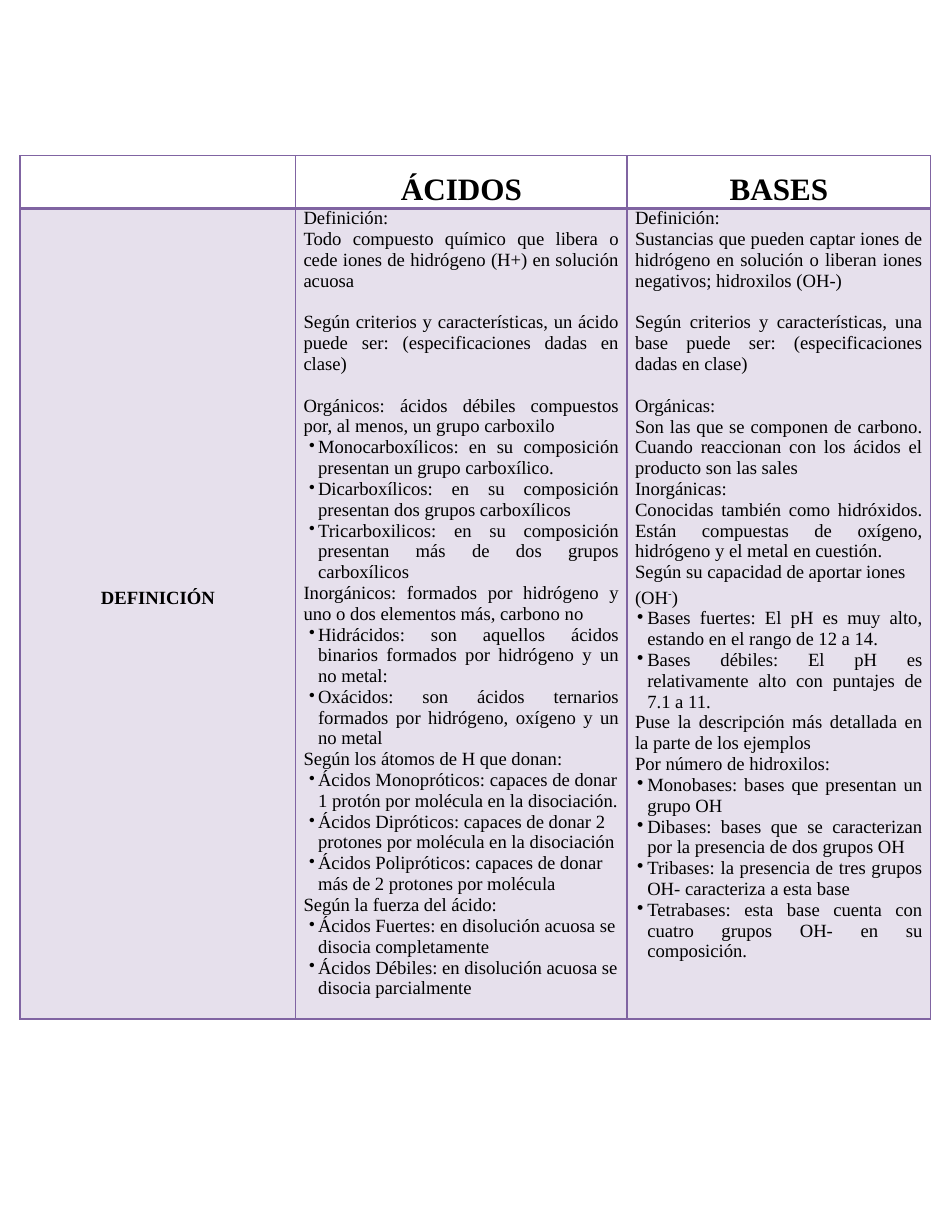
from lxml import etree
from pptx import Presentation
from pptx.dml.color import RGBColor
from pptx.enum.text import MSO_ANCHOR, PP_ALIGN
from pptx.oxml.ns import qn
from pptx.util import Inches, Pt

CENTER, LEFT, JUSTIFY = PP_ALIGN.CENTER, PP_ALIGN.LEFT, PP_ALIGN.JUSTIFY
MIDDLE = MSO_ANCHOR.MIDDLE
PURPLE = RGBColor(0x80, 0x64, 0xA2)
LILAC = RGBColor(0xE6, 0xE0, 0xEC)
BLACK = RGBColor(0, 0, 0)
FONT = "Times New Roman"
BLANK_LAYOUT = 6
LINE_GAP = 13.5

PLAIN, JUSTIFIED, SPACED, SPACED_PLAIN, BULLET, BULLET_PLAIN, FORMULA = range(7)

ACIDS = [
    (PLAIN, "Definición:"),
    (JUSTIFIED, "Todo compuesto químico que libera o cede iones de hidrógeno (H+) en solución acuosa"),
    (SPACED, "Según criterios y características, un ácido puede ser: (especificaciones dadas en clase)"),
    (SPACED, "Orgánicos: ácidos débiles compuestos por, al menos, un grupo carboxilo"),
    (BULLET, "Monocarboxílicos: en su composición presentan un grupo carboxílico."),
    (BULLET, "Dicarboxílicos: en su composición presentan dos grupos carboxílicos"),
    (BULLET, "Tricarboxilicos: en su composición presentan más de dos grupos carboxílicos"),
    (JUSTIFIED, "Inorgánicos: formados por hidrógeno y uno o dos elementos más, carbono no"),
    (BULLET, "Hidrácidos: son aquellos ácidos binarios formados por hidrógeno y un no metal:"),
    (BULLET, "Oxácidos: son ácidos ternarios formados por hidrógeno, oxígeno y un no metal"),
    (JUSTIFIED, "Según los átomos de H que donan:"),
    (BULLET_PLAIN, "Ácidos Monopróticos: capaces de donar 1 protón por molécula en la disociación."),
    (BULLET_PLAIN, "Ácidos Dipróticos: capaces de donar 2 protones por molécula en la disociación"),
    (BULLET_PLAIN, "Ácidos Polipróticos: capaces de donar más de 2 protones por molécula"),
    (PLAIN, "Según la fuerza del ácido:"),
    (BULLET_PLAIN, "Ácidos Fuertes: en disolución acuosa se disocia completamente"),
    (BULLET_PLAIN, "Ácidos Débiles: en disolución acuosa se disocia parcialmente"),
]
BASES = [
    (PLAIN, "Definición:"),
    (JUSTIFIED, "Sustancias que pueden captar iones de hidrógeno en solución o liberan iones negativos; hidroxilos (OH-)"),
    (SPACED, "Según criterios y características, una base puede ser: (especificaciones dadas en clase)"),
    (SPACED_PLAIN, "Orgánicas:"),
    (JUSTIFIED, "Son las que se componen de carbono. Cuando reaccionan con los ácidos el producto son las sales"),
    (PLAIN, "Inorgánicas:"),
    (JUSTIFIED, "Conocidas también como hidróxidos. Están compuestas de oxígeno, hidrógeno y el metal en cuestión."),
    (JUSTIFIED, "Según su capacidad de aportar iones"),
    (FORMULA, "(OH"),
    (BULLET, "Bases fuertes: El pH es muy alto, estando en el rango de 12 a 14."),
    (BULLET, "Bases débiles: El pH es relativamente alto con puntajes de 7.1 a 11."),
    (JUSTIFIED, "Puse la descripción más detallada en la parte de los ejemplos"),
    (JUSTIFIED, "Por número de hidroxilos:"),
    (BULLET, "Monobases: bases que presentan un grupo OH"),
    (BULLET, "Dibases: bases que se caracterizan por la presencia de dos grupos OH"),
    (BULLET, "Tribases: la presencia de tres grupos OH- caracteriza a esta base"),
    (BULLET, "Tetrabases: esta base cuenta con cuatro grupos OH- en su composición."),
]


def format_runs(para, size, bold):
    for span in para.runs:
        span.font.name = FONT
        span.font.size = Pt(size)
        span.font.bold = bold
        span.font.color.rgb = BLACK


def add_borders(cell, widths):
    properties = cell._tc.get_or_add_tcPr()
    for position, (side, width) in enumerate(zip(("lnL", "lnR", "lnT", "lnB"), widths)):
        line = etree.Element(qn(f"a:{side}"), w=str(Pt(width)))
        fill = etree.SubElement(line, qn("a:solidFill"))
        etree.SubElement(fill, qn("a:srgbClr"), val=str(PURPLE))
        properties.insert(position, line)


deck = Presentation()
deck.slide_width, deck.slide_height = Inches(8.5), Inches(11)
page = deck.slides.add_slide(deck.slide_layouts[BLANK_LAYOUT])

frame = page.shapes.add_table(2, 3, Inches(0.18), Inches(1.39), Inches(8.13), Inches(7.71))
table = frame.table
table.first_row = table.horz_banding = False
for column, width in zip(table.columns, (2.46, 2.96, 2.71)):
    column.width = Inches(width)
for row, height in zip(table.rows, (0.47, 7.24)):
    row.height = Inches(height)

for row_index in range(2):
    for cell in table.rows[row_index].cells:
        cell.margin_left = cell.margin_right = cell.margin_top = cell.margin_bottom = 0
        if row_index:
            cell.fill.solid()
            cell.fill.fore_color.rgb = LILAC
            add_borders(cell, (1, 1, 2, 1))
        else:
            cell.fill.background()
            add_borders(cell, (1, 1, 1, 2))

for column_index, heading in enumerate(("ÁCIDOS", "BASES"), 1):
    para = table.cell(0, column_index).text_frame.paragraphs[0]
    para.text = heading
    para.alignment = CENTER
    para.line_spacing = 1.5
    format_runs(para, 20, True)

label = table.cell(1, 0)
label.vertical_anchor = MIDDLE
label.margin_bottom = Inches(0.27)
para = label.text_frame.paragraphs[0]
para.text = "DEFINICIÓN"
para.alignment = CENTER
format_runs(para, 12, True)

for column_index, entries, hanging, bullet_size in ((1, ACIDS, (0.2, -0.08), 91), (2, BASES, (0.18, -0.09), 100)):
    body = table.cell(1, column_index).text_frame
    for entry_index, (kind, wording) in enumerate(entries):
        para = body.add_paragraph() if entry_index else body.paragraphs[0]
        para.text = wording
        para.alignment = JUSTIFY if kind in (JUSTIFIED, SPACED, BULLET) else LEFT
        para.space_before = Pt({SPACED: LINE_GAP, SPACED_PLAIN: LINE_GAP, FORMULA: 3}.get(kind, 0.1))
        if kind == FORMULA:
            charge = para.add_run()
            charge.text = "-"
            charge.font._element.set("baseline", "33000")
            para.add_run().text = ")"
        format_runs(para, 12, False)
        bulleted = kind in (BULLET, BULLET_PLAIN)
        margin, indent = hanging if bulleted else (0.07, 0)
        properties = para._p.get_or_add_pPr()
        properties.set("marL", str(Inches(margin)))
        properties.set("marR", str(Inches(0.07)))
        properties.set("indent", str(Inches(indent)))
        if bulleted:
            etree.SubElement(properties, qn("a:buSzPct"), val=str(bullet_size * 1000))
            etree.SubElement(properties, qn("a:buChar"), char="•")

deck.save("out.pptx")
